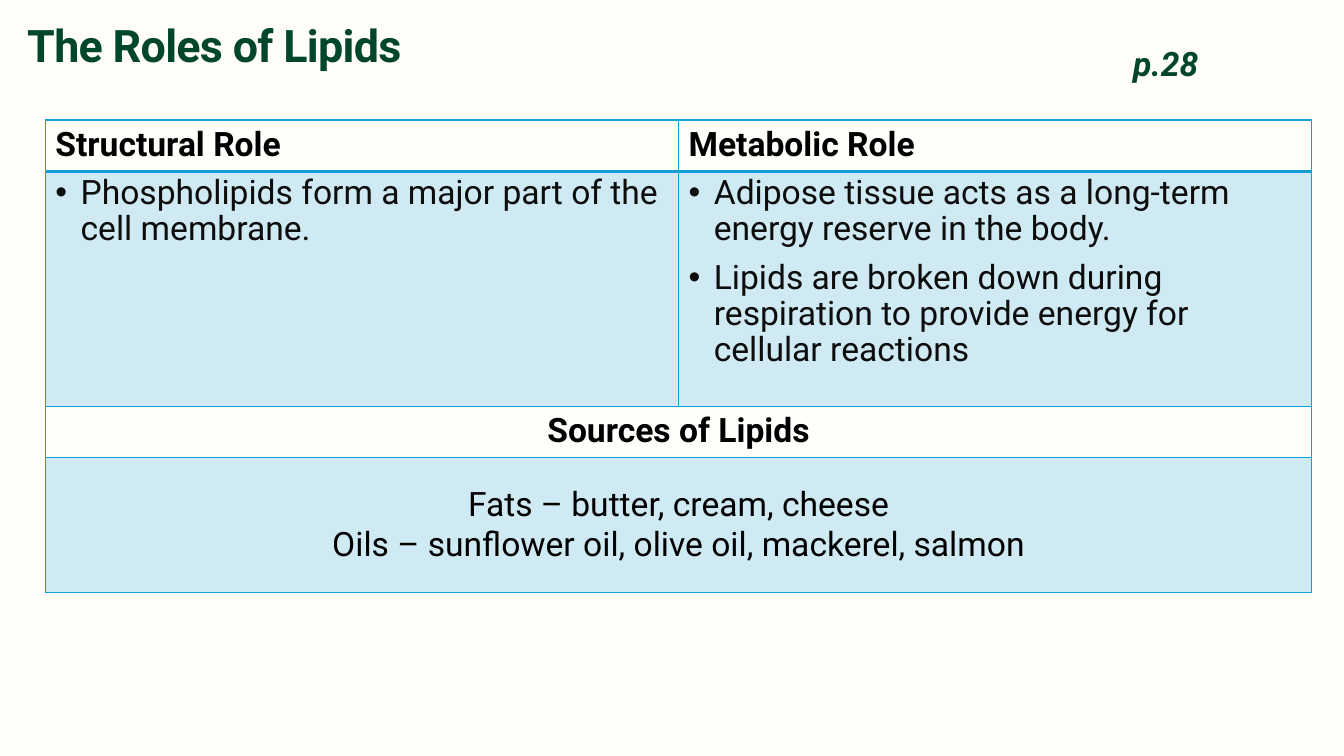
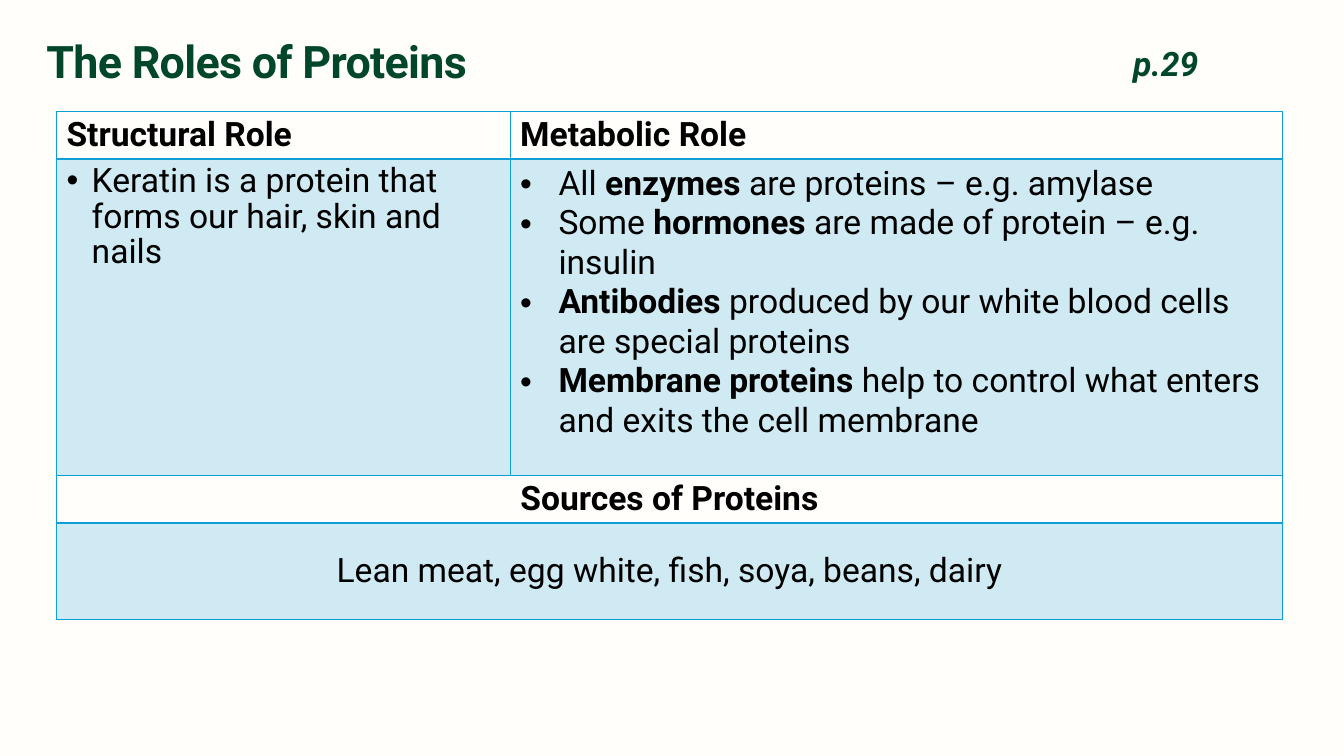
from dataclasses import dataclass

from lxml import etree
from pptx import Presentation
from pptx.dml.color import RGBColor
from pptx.enum import text as t
from pptx.oxml import ns
from pptx.util import Inches, Pt

COLORS = {
    "page": "FFFEFA",
    "heading": "00472A",
    "rule": "0F9ED5",
    "label": "000000",
    "lipid_body": "0D0D0D",
}
FONT = "Roboto"
BODY_SIZE = 24
TITLE_SIZE = 32
TINT_PERCENT = 20
PAGE_REF_BOX = (11.14, 0.42, 0.96, 0.74)
TITLE_WIDTH, TITLE_HEIGHT = 10.31, 0.89


@dataclass(frozen=True)
class Span:
    text: str
    bold: bool = False


@dataclass(frozen=True)
class Line:
    spans: tuple[Span, ...]
    indent: float = 0
    tight: bool = False
    centered: bool = False
    color: str = "label"


@dataclass(frozen=True)
class RoleSlide:
    title: str
    title_at: tuple[float, float]
    page_ref: str
    table_at: tuple[float, float]
    columns: tuple[float, float]
    rows: tuple[float, ...]
    structural: tuple[Line, ...]
    metabolic: tuple[Line, ...]
    sources_label: str
    sources: tuple[Line, ...]


def point(content: str, color: str = "label") -> Line:
    return Line((Span(content),), indent=0.25, tight=True, color=color)


def role(*spans: Span) -> Line:
    return Line(spans, indent=0.38)


def label(content: str, centered: bool = False) -> tuple[Line, ...]:
    return (Line((Span(content, True),), tight=True, centered=centered),)


def source(content: str) -> Line:
    return Line((Span(content),), centered=True)


def add_child(parent, tag: str, **attributes: str):
    return etree.SubElement(parent, ns.qn(tag), attributes)


def add_run(paragraph, content: str, color: str, size: int, bold: bool, italic: bool = False):
    run = paragraph.add_run()
    run.text = content
    font = run.font
    font.name, font.size = FONT, Pt(size)
    font.bold, font.italic = bold, italic
    font.color.rgb = RGBColor.from_string(COLORS[color])
    return run


def write_lines(frame, lines: tuple[Line, ...]) -> None:
    for number, line in enumerate(lines):
        paragraph = frame.add_paragraph() if number else frame.paragraphs[0]
        if line.indent:
            properties = paragraph._p.get_or_add_pPr()
            properties.set("marL", str(Inches(line.indent)))
            properties.set("indent", str(-Inches(line.indent)))
            add_child(properties, "a:buFont", typeface="Arial")
            add_child(properties, "a:buChar", char="•")
        paragraph.alignment = t.PP_ALIGN.CENTER if line.centered else t.PP_ALIGN.LEFT
        if line.tight:
            paragraph.line_spacing = 0.9
            paragraph.space_before = Pt(10 if number else 0)
        for span in line.spans:
            add_run(paragraph, span.text, line.color, BODY_SIZE, span.bold)


def style_cell(cell, row: int) -> None:
    properties = cell._tc.get_or_add_tcPr()
    heavy_edge = {0: "B", 1: "T"}.get(row)
    for edge in "LRTB":
        width = 2 if edge == heavy_edge else 1
        border = add_child(properties, f"a:ln{edge}", w=str(Pt(width)))
        add_child(add_child(border, "a:solidFill"), "a:srgbClr", val=COLORS["rule"])
    if row % 2:
        cell.fill.solid()
        cell.fill.fore_color.rgb = RGBColor.from_string(COLORS["rule"])
        tint = properties.find(".//" + ns.qn("a:solidFill") + "[last()]")
        tint = properties.findall(ns.qn("a:solidFill"))[0][0]
        add_child(tint, "a:alpha", val=str(TINT_PERCENT * 1000))
    else:
        cell.fill.background()
    cell.vertical_anchor = t.MSO_ANCHOR.TOP if row == 1 else t.MSO_ANCHOR.MIDDLE


def add_roles_table(slide, content: RoleSlide) -> None:
    left, top = content.table_at
    table = slide.shapes.add_table(
        len(content.rows), len(content.columns), Inches(left), Inches(top),
        Inches(sum(content.columns)), Inches(sum(content.rows)),
    ).table
    table.first_row = table.horz_banding = False
    for column, width in zip(table.columns, content.columns):
        column.width = Inches(width)
    for row, height in zip(table.rows, content.rows):
        row.height = Inches(height)
    for row in (2, 3):
        table.cell(row, 0).merge(table.cell(row, 1))
    for row in range(len(content.rows)):
        for column in range(len(content.columns)):
            style_cell(table.cell(row, column), row)
    entries = {
        (0, 0): label("Structural Role"),
        (0, 1): label("Metabolic Role"),
        (1, 0): content.structural,
        (1, 1): content.metabolic,
        (2, 0): label(content.sources_label, centered=True),
        (3, 0): content.sources,
    }
    for (row, column), lines in entries.items():
        write_lines(table.cell(row, column).text_frame, lines)


def add_title(slide, content: RoleSlide) -> None:
    title = slide.shapes.title
    title.left, title.top = map(Inches, content.title_at)
    title.width, title.height = Inches(TITLE_WIDTH), Inches(TITLE_HEIGHT)
    frame = title.text_frame
    frame.auto_size = t.MSO_AUTO_SIZE.NONE
    frame.vertical_anchor = t.MSO_ANCHOR.TOP
    paragraph = frame.paragraphs[0]
    paragraph.alignment = t.PP_ALIGN.LEFT
    paragraph.line_spacing = 0.9
    run = add_run(paragraph, content.title, "heading", TITLE_SIZE, True)
    run._r.get_or_add_rPr().set("spc", "-50")


def add_page_ref(slide, page_ref: str) -> None:
    frame = slide.shapes.add_textbox(*map(Inches, PAGE_REF_BOX)).text_frame
    frame.word_wrap = True
    paragraph = frame.paragraphs[0]
    paragraph.line_spacing = 0.9
    add_run(paragraph, page_ref, "heading", BODY_SIZE, True, italic=True)


def add_role_slide(deck, content: RoleSlide) -> None:
    slide = deck.slides.add_slide(deck.slide_layouts.get_by_name("Title Only"))
    slide.background.fill.solid()
    slide.background.fill.fore_color.rgb = RGBColor.from_string(COLORS["page"])
    add_title(slide, content)
    add_roles_table(slide, content)
    add_page_ref(slide, content.page_ref)


LIPIDS = RoleSlide(
    title="The Roles of Lipids",
    title_at=(0.17, 0.19),
    page_ref="p.28",
    table_at=(0.45, 1.19),
    columns=(6.28, 6.28),
    rows=(0.51, 2.33, 0.51, 1.34),
    structural=(
        point("Phospholipids form a major part of the cell membrane.", "lipid_body"),
    ),
    metabolic=(
        point("Adipose tissue acts as a long-term energy reserve in the body.", "lipid_body"),
        point(
            "Lipids are broken down during respiration to provide energy for cellular reactions",
            "lipid_body",
        ),
    ),
    sources_label="Sources of Lipids",
    sources=(
        source("Fats – butter, cream, cheese"),
        source("Oils – sunflower oil, olive oil, mackerel, salmon"),
    ),
)

PROTEINS = RoleSlide(
    title="The Roles of Proteins",
    title_at=(0.36, 0.34),
    page_ref="p.29",
    table_at=(0.56, 1.11),
    columns=(4.5, 7.66),
    rows=(0.47, 3.14, 0.47, 0.96),
    structural=(point("Keratin is a protein that forms our hair, skin and nails"),),
    metabolic=(
        role(Span("All "), Span("enzymes", True), Span(" are proteins – e.g. amylase")),
        role(
            Span("Some "),
            Span("hormones", True),
            Span(" are made of protein – e.g. insulin"),
        ),
        role(
            Span("Antibodies", True),
            Span(" produced by our white blood cells are special proteins"),
        ),
        role(
            Span("Membrane proteins", True),
            Span(" help to control what enters and exits the cell membrane"),
        ),
    ),
    sources_label="Sources of Proteins",
    sources=(source("Lean meat, egg white, fish, soya, beans, dairy"),),
)


def main() -> None:
    deck = Presentation()
    deck.slide_width, deck.slide_height = Inches(13.33), Inches(7.5)
    for content in (LIPIDS, PROTEINS):
        add_role_slide(deck, content)
    deck.save("out.pptx")


if __name__ == "__main__":
    main()
